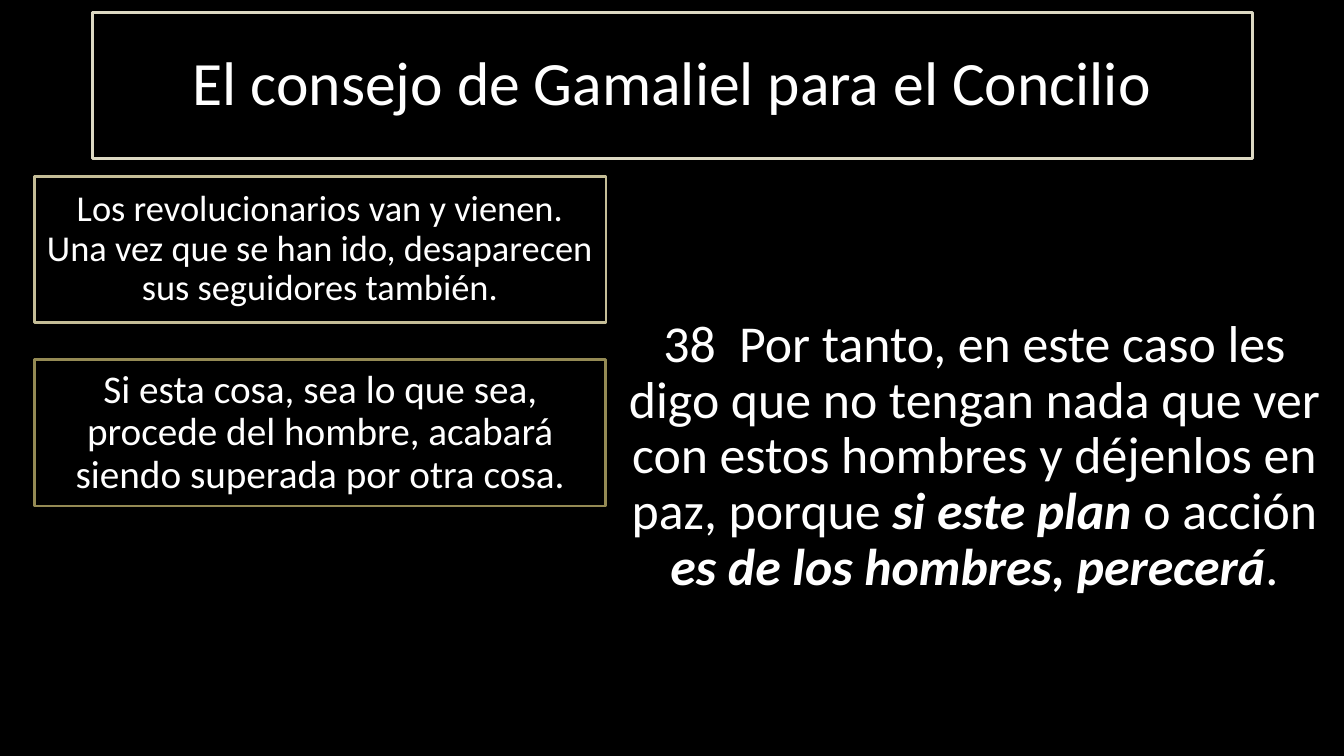
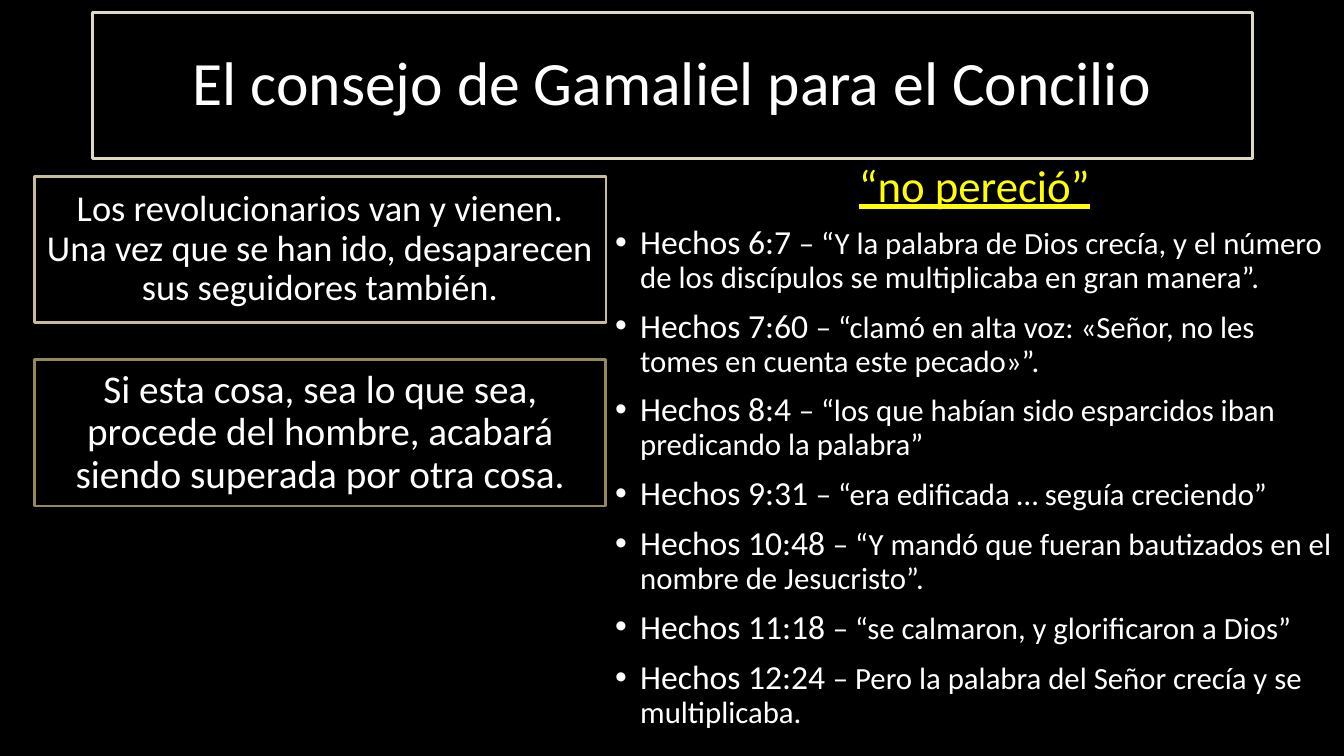
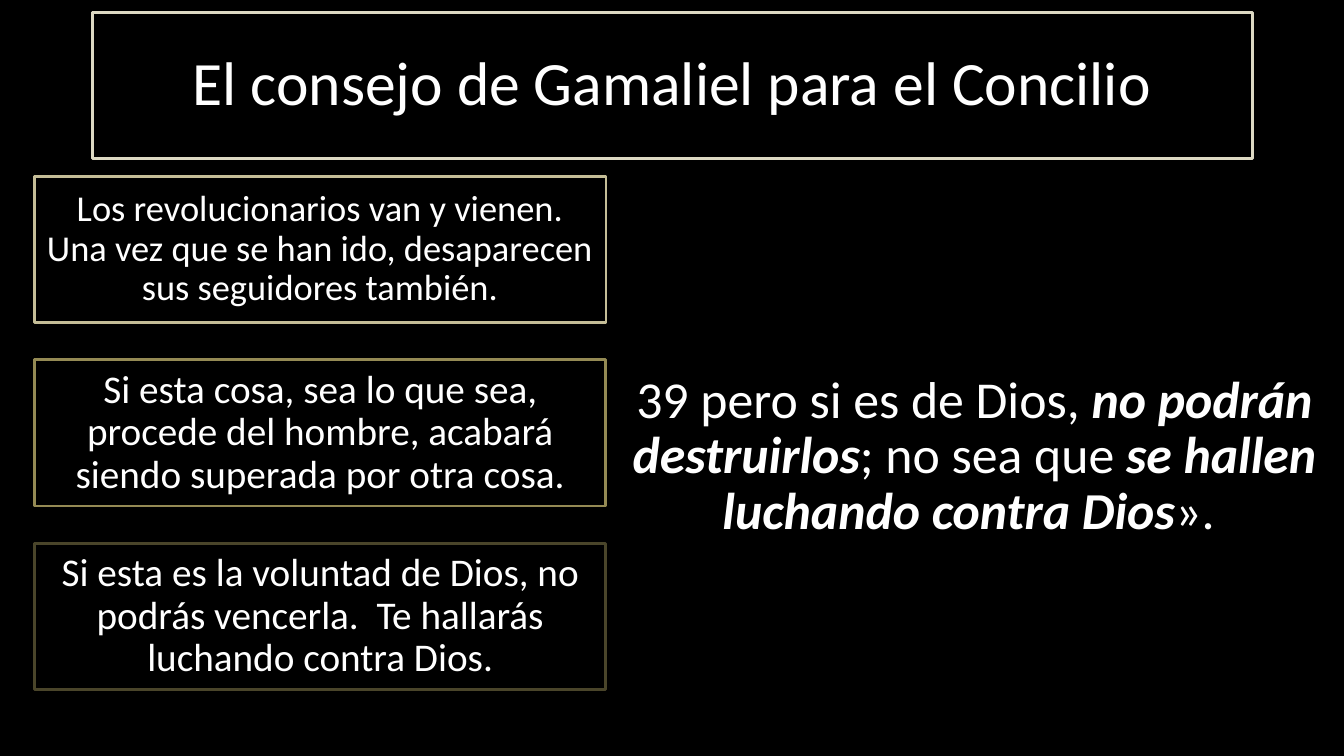
from lxml.etree import SubElement
from pptx import Presentation
from pptx.dml.color import RGBColor
from pptx.enum.shapes import MSO_SHAPE as Shape
from pptx.enum.text import MSO_ANCHOR as Anchor, MSO_AUTO_SIZE as AutoSize, PP_ALIGN as Align
from pptx.oxml.ns import qn
from pptx.util import Inches, Pt

COLORS = {
    "background": "000000",
    "text": "FFFFFF",
    "highlight": "FFFF00",
    "title_line": "DDD9C3",
    "first_line": "C4BD97",
    "second_line": "948A54",
    "third_line": "4A452A",
}
FONT = "Calibri"
TITLE = "El consejo de Gamaliel para el Concilio"
TITLE_BOX = (0.92, 0.12, 11.5, 1.45)
STATEMENT_BOX = (0.34, 1.75, 5.67, 1.45)
STATEMENT_STEP = 1.82
PASSAGE_BOX = (6, 1.57, 7.33, 5.93)
STATEMENTS = [
    ("Los revolucionarios van y vienen. Una vez que se han ido, desaparecen sus seguidores también.", 26, "first_line"),
    ("Si esta cosa, sea lo que sea, procede del hombre, acabará siendo superada por otra cosa.", 28, "second_line"),
    ("Si esta es la voluntad de Dios, no podrás vencerla.  Te hallarás luchando contra Dios.", 28, "third_line"),
]
VERSE_38 = [
    ("38  Por tanto, en este caso les digo que no tengan nada que ver con estos hombres y déjenlos en paz, porque ", False),
    ("si este plan ", True),
    ("o acción ", False),
    ("es de los hombres, perecerá", True),
    (".", False),
]
VERSE_39 = [
    ("39 pero si es de Dios, ", False),
    ("no podrán destruirlos", True),
    ("; no sea que ", False),
    ("se hallen luchando contra Dios", True),
    ("». ", False),
]
REFERENCES_TITLE = "“no pereció”"
REFERENCES = [
    ("Hechos 6:7 ", "– “Y la palabra de Dios crecía, y el número de los discípulos se multiplicaba en gran manera”."),
    ("Hechos 7:60 ", "– “clamó en alta voz: «Señor, no les tomes en cuenta este pecado»”."),
    ("Hechos 8:4 ", "– “los que habían sido esparcidos iban predicando la palabra”"),
    ("Hechos 9:31 ", "– “era edificada … seguía creciendo”"),
    ("Hechos 10:48 ", "– “Y mandó que fueran bautizados en el nombre de Jesucristo”."),
    ("Hechos 11:18 ", "– “se calmaron, y glorificaron a Dios”"),
    ("Hechos 12:24 ", "– Pero la palabra del Señor crecía y se multiplicaba. "),
]


def place(shape, box, anchor=Anchor.MIDDLE):
    """Move a shape to its box and prepare its text frame."""
    shape.left, shape.top, shape.width, shape.height = map(Inches, box)
    frame = shape.text_frame
    frame.word_wrap = True
    frame.auto_size = AutoSize.NONE
    frame.vertical_anchor = anchor
    return frame


def outline(shape, color):
    """Give a shape a thin coloured border without fill."""
    shape.fill.background()
    shape.line.color.rgb = RGBColor.from_string(COLORS[color])
    shape.line.width = Pt(2)


def add_text(paragraph, text, size, color="text", emphasis=False, underline=False):
    """Add a formatted run to a paragraph."""
    run = paragraph.add_run()
    run.text = text
    font = run.font
    font.name, font.size = FONT, Pt(size)
    font.bold = font.italic = emphasis
    font.underline = underline
    font.color.rgb = RGBColor.from_string(COLORS[color])


def format_paragraph(paragraph, bullet=False, space_before=10):
    """Set spacing and make the paragraph centred or bulleted."""
    paragraph.alignment = Align.LEFT if bullet else Align.CENTER
    paragraph.line_spacing = 0.9
    paragraph.space_before = Pt(space_before)
    properties = paragraph._p.get_or_add_pPr()
    indent = Inches(0.25) if bullet else 0
    properties.set("marL", str(indent))
    properties.set("indent", str(-indent))
    if bullet:
        SubElement(properties, qn("a:buFont"), typeface="Arial")
        SubElement(properties, qn("a:buChar"), char="•")
    else:
        SubElement(properties, qn("a:buNone"))


def fill_title(shape):
    """Write the framed title."""
    paragraph = place(shape, TITLE_BOX).paragraphs[0]
    outline(shape, "title_line")
    format_paragraph(paragraph, space_before=0)
    add_text(paragraph, TITLE, 44)


def add_statements(slide, first_shape, count):
    """Stack the framed statements down the left column."""
    left, top, width, height = STATEMENT_BOX
    for index, (text, size, color) in enumerate(STATEMENTS[:count]):
        box = (left, top + index * STATEMENT_STEP, width, height)
        shape = first_shape if index == 0 else slide.shapes.add_shape(Shape.RECTANGLE, *map(Inches, box))
        shape.shadow.inherit = False
        outline(shape, color)
        paragraph = place(shape, box).paragraphs[0]
        format_paragraph(paragraph)
        add_text(paragraph, text, size)


def fill_verse(shape, verse):
    """Write a centred verse with emphasised phrases."""
    paragraph = place(shape, PASSAGE_BOX).paragraphs[0]
    format_paragraph(paragraph)
    for text, emphasis in verse:
        add_text(paragraph, text, 37, emphasis=emphasis)


def fill_references(shape, references):
    """Write the underlined heading and the list of references."""
    frame = place(shape, PASSAGE_BOX, Anchor.TOP)
    heading = frame.paragraphs[0]
    format_paragraph(heading)
    add_text(heading, REFERENCES_TITLE, 32, color="highlight", underline=True)
    for reference, quote in references:
        paragraph = frame.add_paragraph()
        format_paragraph(paragraph, bullet=True)
        add_text(paragraph, reference, 24)
        add_text(paragraph, quote, 22)


def add_council_slide(presentation, statement_count, fill_passage, passage):
    """Add a slide with title, statements and a passage."""
    slide = presentation.slides.add_slide(presentation.slide_layouts[3])
    title, statement, passage_shape = list(slide.placeholders)[:3]
    fill_title(title)
    add_statements(slide, statement, statement_count)
    fill_passage(passage_shape, passage)


def main():
    """Build and save the presentation."""
    presentation = Presentation()
    presentation.slide_width, presentation.slide_height = Inches(13.33), Inches(7.5)
    background = presentation.slide_master.background.fill
    background.solid()
    background.fore_color.rgb = RGBColor.from_string(COLORS["background"])
    add_council_slide(presentation, 2, fill_verse, VERSE_38)
    add_council_slide(presentation, 2, fill_references, REFERENCES)
    add_council_slide(presentation, 3, fill_verse, VERSE_39)
    presentation.save("out.pptx")


if __name__ == "__main__":
    main()
